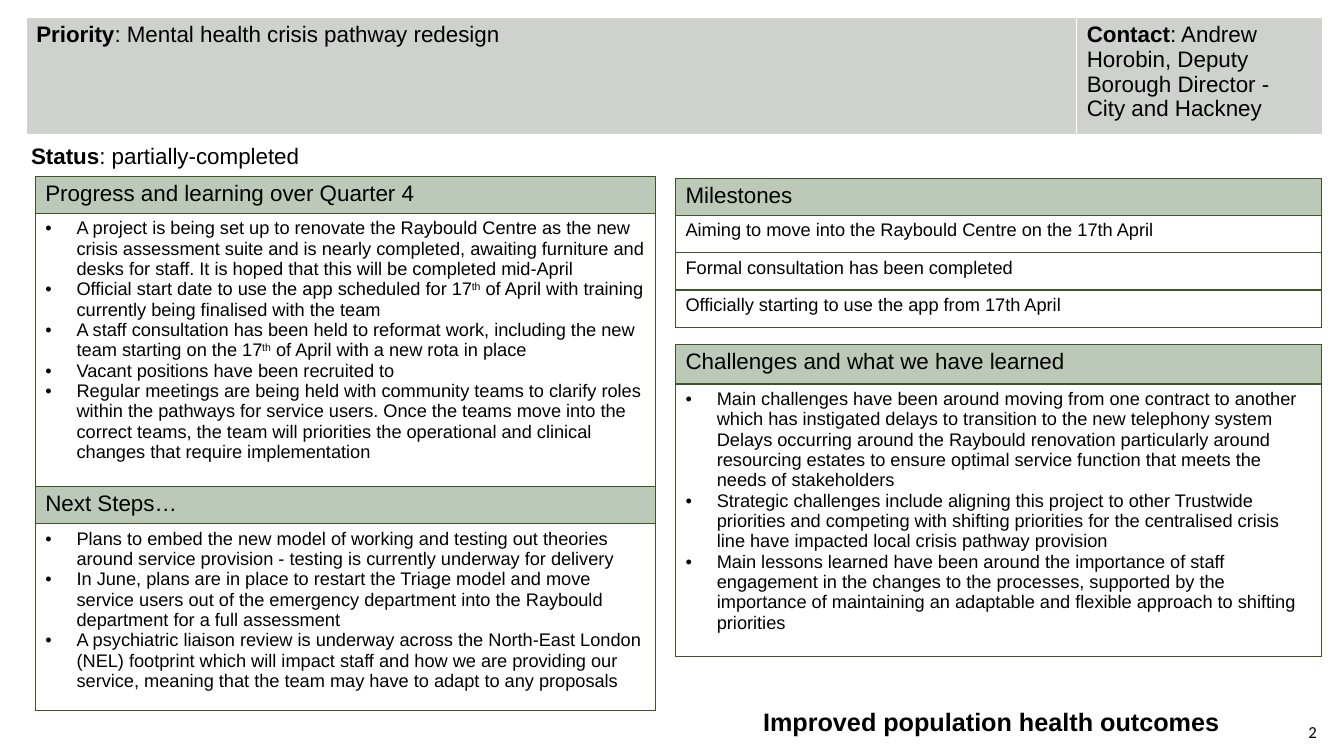
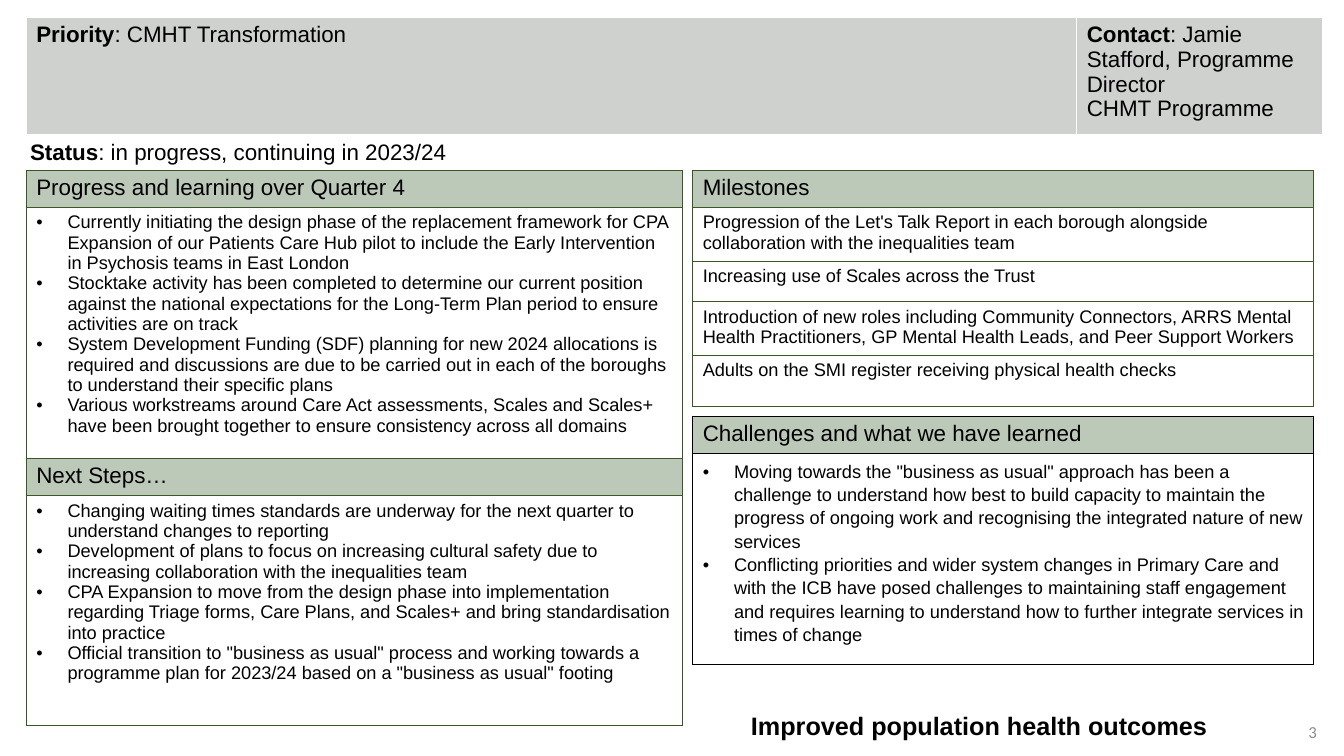
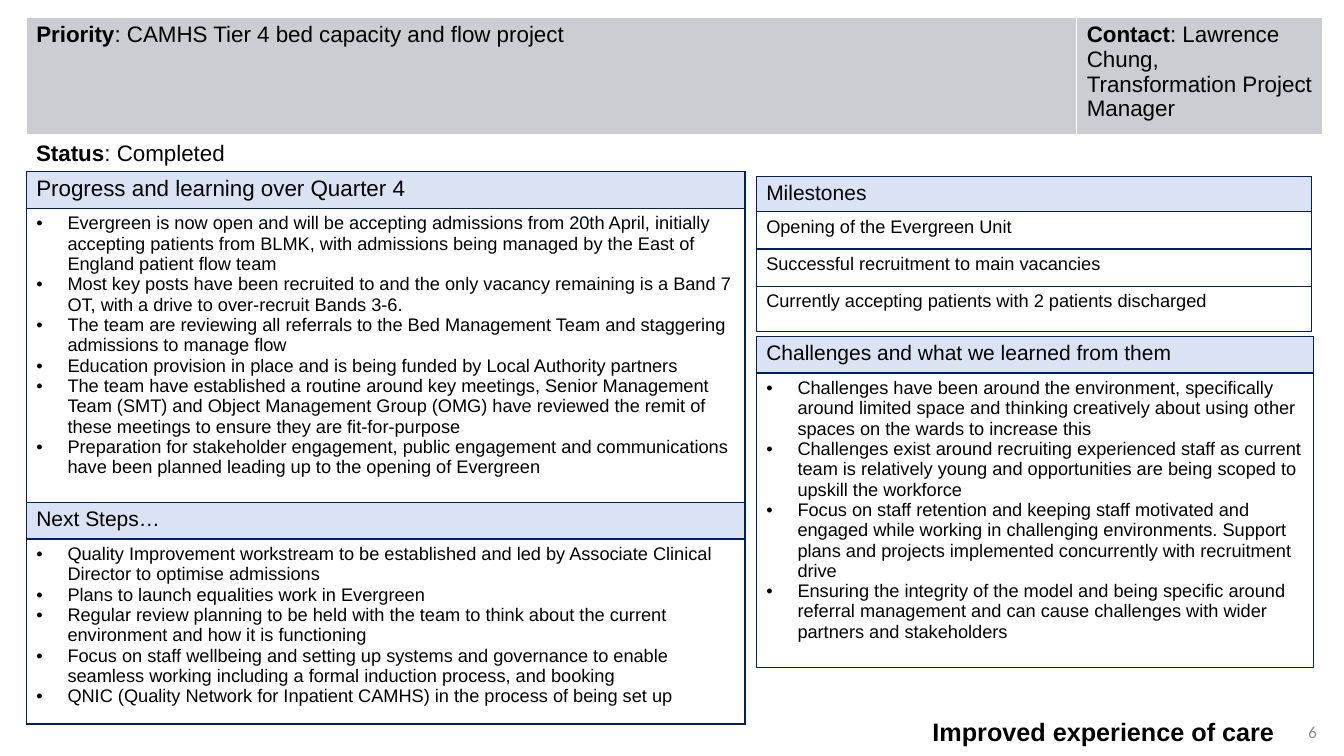
from collections import namedtuple

from lxml import etree
from pptx import Presentation
from pptx.dml.color import RGBColor
from pptx.enum.text import MSO_ANCHOR, PP_ALIGN
from pptx.oxml.ns import qn
from pptx.util import Inches, Pt

RIGHT = PP_ALIGN.RIGHT
TOP, MIDDLE = MSO_ANCHOR.TOP, MSO_ANCHOR.MIDDLE

FONT, NUMBER_FONT = "Arial", "Calibri"
BLACK, WHITE, GREY = "000000", "FFFFFF", "8C8C8C"
HEADING_SIZE, BODY_SIZE, OUTCOME_SIZE, NUMBER_SIZE = 16, 13, 18, 12
BULLET_INDENT = 0.31

Theme = namedtuple("Theme", "banner heading border")
GREEN = Theme("CED1CD", "BCC9B9", "385723")
BLUE = Theme("CCCDD2", "DAE3F3", "002060")

# A section has a heading and body rows; heights start with the heading's.
Section = namedtuple("Section", "heading rows heights bulleted size spacing",
                     defaults=(True, HEADING_SIZE, 1.0))
Panel = namedtuple("Panel", "left top width sections border", defaults=(None,))
Report = namedtuple("Report", "theme priority contact status status_at panels "
                              "outcome outcome_at number number_color")


def rgb(color):
    return RGBColor.from_string(color)


def add_run(paragraph, text, size, bold=False, color=BLACK, font=FONT):
    run = paragraph.add_run()
    run.text = text
    run.font.size = Pt(size)
    run.font.bold = bold
    run.font.name = font
    run.font.color.rgb = rgb(color)
    return run


def add_rich_text(paragraph, text, size):
    """Write text in which parts between carets are superscript."""
    for index, part in enumerate(text.split("^")):
        run = add_run(paragraph, part, size)
        if index % 2:
            run.font._element.set("baseline", "30000")


def add_labelled_text(paragraph, label, text):
    add_run(paragraph, label, HEADING_SIZE, bold=True)
    add_run(paragraph, f": {text}", HEADING_SIZE)


def add_bullet(paragraph):
    properties = paragraph._p.get_or_add_pPr()
    properties.set("marL", str(Inches(BULLET_INDENT)))
    properties.set("indent", str(-Inches(BULLET_INDENT)))
    etree.SubElement(properties, qn("a:buFont"), typeface=FONT)
    etree.SubElement(properties, qn("a:buChar"), char="•")


def next_paragraph(text_frame, index):
    return text_frame.add_paragraph() if index else text_frame.paragraphs[0]


def format_cell(cell, border, fill=None):
    if fill:
        cell.fill.solid()
        cell.fill.fore_color.rgb = rgb(fill)
    else:
        cell.fill.background()
    properties = cell._tc.get_or_add_tcPr()
    for position, side in enumerate(("lnL", "lnR", "lnT", "lnB")):
        line = etree.Element(qn(f"a:{side}"), w=str(Pt(1)))
        solid = etree.SubElement(line, qn("a:solidFill"))
        etree.SubElement(solid, qn("a:srgbClr"), val=border)
        properties.insert(position, line)


def add_plain_table(slide, left, top, widths, heights):
    table = slide.shapes.add_table(
        len(heights), len(widths), Inches(left), Inches(top),
        Inches(sum(widths)), Inches(sum(heights))).table
    table.first_row = table.horz_banding = False
    for column, width in zip(table.columns, widths):
        column.width = Inches(width)
    for row, height in zip(table.rows, heights):
        row.height = Inches(height)
    return table


def add_banner(slide, report):
    table = add_plain_table(slide, 0.26, 0.17, [10.42, 2.44], [1.17])
    contact, *more_lines = report.contact
    labelled = (("Priority", report.priority), ("Contact", contact))
    for column, (label, text) in enumerate(labelled):
        cell = table.cell(0, column)
        add_labelled_text(cell.text_frame.paragraphs[0], label, text)
        format_cell(cell, WHITE, report.theme.banner)
    for line in more_lines:
        add_run(table.cell(0, 1).text_frame.add_paragraph(), line, HEADING_SIZE)


def add_panel(slide, panel, theme):
    """Draw a one-column table of headings, each over its body rows."""
    border = panel.border or theme.border
    heights = [height for section in panel.sections for height in section.heights]
    table = add_plain_table(slide, panel.left, panel.top, [panel.width], heights)
    cells = table.iter_cells()
    for section in panel.sections:
        heading = next(cells)
        add_run(heading.text_frame.paragraphs[0], section.heading, section.size)
        format_cell(heading, border, theme.heading)
        # Bullets share one cell; plain items take a cell each.
        groups = [section.rows] if section.bulleted else [[row] for row in section.rows]
        for group in groups:
            cell = next(cells)
            for index, text in enumerate(group):
                paragraph = next_paragraph(cell.text_frame, index)
                paragraph.line_spacing = section.spacing
                if section.bulleted:
                    add_bullet(paragraph)
                add_rich_text(paragraph, text, BODY_SIZE)
            format_cell(cell, border)


def add_text_box(slide, left, top, width, height, anchor=TOP):
    """Add an empty text box and return its first paragraph."""
    box = slide.shapes.add_textbox(Inches(left), Inches(top), Inches(width), Inches(height))
    box.text_frame.word_wrap = True
    box.text_frame.vertical_anchor = anchor
    return box.text_frame.paragraphs[0]


def add_report(presentation, report):
    slide = presentation.slides.add_slide(presentation.slide_layouts[6])
    add_banner(slide, report)
    status = add_text_box(slide, *report.status_at, 4.94, 0.37)
    add_labelled_text(status, "Status", report.status)
    for panel in report.panels:
        add_panel(slide, panel, report.theme)
    outcome = add_text_box(slide, *report.outcome_at, 4.87, 0.42)
    outcome.line_spacing = 1.15
    outcome.space_after = Pt(10)
    add_run(outcome, report.outcome, OUTCOME_SIZE, bold=True)
    number = add_text_box(slide, 10.16, 7.06, 3, 0.4, MIDDLE)
    number.alignment = RIGHT
    add_run(number, report.number, NUMBER_SIZE, color=report.number_color, font=NUMBER_FONT)


PROGRESS = "Progress and learning over Quarter 4"
NEXT_STEPS = "Next Steps…"
MILESTONES = "Milestones"
CHALLENGES = "Challenges and what we have learned"
POPULATION_HEALTH = "Improved population health outcomes"

CRISIS_PATHWAY = Report(
    GREEN, "Mental health crisis pathway redesign",
    ["Andrew Horobin, Deputy Borough Director - City and Hackney"],
    "partially-completed", (0.21, 1.36),
    [
        Panel(0.35, 1.75, 6.15, [
            Section(PROGRESS, [
                "A project is being set up to renovate the Raybould Centre as the new crisis assessment "
                "suite and is nearly completed, awaiting furniture and desks for staff. It is hoped that "
                "this will be completed mid-April",
                "Official start date to use the app scheduled for 17^th^ of April with training currently "
                "being finalised with the team",
                "A staff consultation has been held to reformat work, including the new team starting on "
                "the 17^th^ of April with a new rota in place",
                "Vacant positions have been recruited to",
                "Regular meetings are being held with community teams to clarify roles within the "
                "pathways for service users. Once the teams move into the correct teams, the team will "
                "priorities the operational and clinical changes that require implementation",
            ], [0.36, 2.71]),
            Section(NEXT_STEPS, [
                "Plans to embed the new model of working and testing out theories around service "
                "provision - testing is currently underway for delivery",
                "In June, plans are in place to restart the Triage model and move service users out of "
                "the emergency department into the Raybould department for a full assessment",
                "A psychiatric liaison review is underway across the North-East London (NEL) footprint "
                "which will impact staff and how we are providing our service, meaning that the team may "
                "have to adapt to any proposals",
            ], [0.37, 1.85]),
        ]),
        Panel(6.7, 1.77, 6.41, [
            Section(MILESTONES, [
                "Aiming to move into the Raybould Centre on the 17th April",
                "Formal consultation has been completed",
                "Officially starting to use the app from 17th April",
            ], [0.35, 0.37, 0.37, 0.37], bulleted=False),
        ]),
        Panel(6.7, 3.42, 6.41, [
            Section(CHALLENGES, [
                "Main challenges have been around moving from one contract to another which has "
                "instigated delays to transition to the new telephony system Delays occurring around the "
                "Raybould renovation particularly around resourcing estates to ensure optimal service "
                "function that meets the needs of stakeholders",
                "Strategic challenges include aligning this project to other Trustwide priorities and "
                "competing with shifting priorities for the centralised crisis line have impacted local "
                "crisis pathway provision",
                "Main lessons learned have been around the importance of staff engagement in the changes "
                "to the processes, supported by the importance of maintaining an adaptable and flexible "
                "approach to shifting priorities",
            ], [0.39, 2.7]),
        ]),
    ],
    POPULATION_HEALTH, (7.47, 6.91), "2", BLACK)

COMMUNITY_TEAMS = Report(
    GREEN, "CMHT Transformation",
    ["Jamie Stafford, Programme Director", "CHMT Programme"],
    "in progress, continuing in 2023/24", (0.2, 1.32),
    [
        Panel(0.26, 1.69, 6.51, [
            Section(PROGRESS, [
                "Currently initiating the design phase of the replacement framework for CPA Expansion of "
                "our Patients Care Hub pilot to include the Early Intervention in Psychosis teams in "
                "East London",
                "Stocktake activity has been completed to determine our current position against the "
                "national expectations for the Long-Term Plan period to ensure activities are on track",
                "System Development Funding (SDF) planning for new 2024 allocations is required and "
                "discussions are due to be carried out in each of the boroughs to understand their "
                "specific plans",
                "Various workstreams around Care Act assessments, Scales and Scales+ have been brought "
                "together to ensure consistency across all domains",
            ], [0.36, 2.49]),
            Section(NEXT_STEPS, [
                "Changing waiting times standards are underway for the next quarter to understand "
                "changes to reporting",
                "Development of plans to focus on increasing cultural safety due to increasing "
                "collaboration with the inequalities team",
                "CPA Expansion to move from the design phase into implementation regarding Triage forms, "
                "Care Plans, and Scales+ and bring standardisation into practice",
                'Official transition to "business as usual" process and working towards a programme plan '
                'for 2023/24 based on a "business as usual" footing',
            ], [0.37, 2.28]),
        ]),
        Panel(6.87, 1.69, 6.16, [
            Section(MILESTONES, [
                "Progression of the Let's Talk Report in each borough alongside collaboration with the "
                "inequalities team",
                "Increasing use of Scales across the Trust",
                "Introduction of new roles including Community Connectors, ARRS Mental Health "
                "Practitioners, GP Mental Health Leads, and Peer Support Workers",
                "Adults on the SMI register receiving physical health checks",
            ], [0.36, 0.51, 0.4, 0.51, 0.51], bulleted=False),
        ]),
        Panel(6.87, 4.13, 6.16, [
            Section(CHALLENGES, [
                'Moving towards the "business as usual" approach has been a challenge to understand how '
                "best to build capacity to maintain the progress of ongoing work and recognising the "
                "integrated nature of new services",
                "Conflicting priorities and wider system changes in Primary Care and with the ICB have "
                "posed challenges to maintaining staff engagement and requires learning to understand "
                "how to further integrate services in times of change",
            ], [0.37, 2.09], spacing=1.15),
        ], BLACK),
    ],
    POPULATION_HEALTH, (7.35, 6.95), "3", GREY)

BED_CAPACITY = Report(
    BLUE, "CAMHS Tier 4 bed capacity and flow project",
    ["Lawrence Chung, Transformation Project Manager"],
    "Completed", (0.26, 1.33),
    [
        Panel(0.26, 1.7, 7.13, [
            Section(PROGRESS, [
                "Evergreen is now open and will be accepting admissions from 20th April, initially "
                "accepting patients from BLMK, with admissions being managed by the East of England "
                "patient flow team",
                "Most key posts have been recruited to and the only vacancy remaining is a Band 7 OT, "
                "with a drive to over-recruit Bands 3-6.",
                "The team are reviewing all referrals to the Bed Management Team and staggering "
                "admissions to manage flow",
                "Education provision in place and is being funded by Local Authority partners",
                "The team have established a routine around key meetings, Senior Management Team (SMT) "
                "and Object Management Group (OMG) have reviewed the remit of these meetings to ensure "
                "they are fit-for-purpose",
                "Preparation for stakeholder engagement, public engagement and communications have been "
                "planned leading up to the opening of Evergreen",
            ], [0.36, 2.92]),
            Section(NEXT_STEPS, [
                "Quality Improvement workstream to be established and led by Associate Clinical Director "
                "to optimise admissions",
                "Plans to launch equalities work in Evergreen",
                "Regular review planning to be held with the team to think about the current environment "
                "and how it is functioning",
                "Focus on staff wellbeing and setting up systems and governance to enable seamless "
                "working including a formal induction process, and booking",
                "QNIC (Quality Network for Inpatient CAMHS) in the process of being set up",
            ], [0.36, 1.83], size=15),
        ]),
        Panel(7.5, 1.75, 5.51, [
            Section(MILESTONES, [
                "Opening of the Evergreen Unit",
                "Successful recruitment to main vacancies",
                "Currently accepting patients with 2 patients discharged",
            ], [0.35, 0.37, 0.37, 0.45], bulleted=False, size=15),
        ]),
        Panel(7.5, 3.34, 5.53, [
            Section("Challenges and what we learned from them", [
                "Challenges have been around the environment, specifically around limited space and "
                "thinking creatively about using other spaces on the wards to increase this",
                "Challenges exist around recruiting experienced staff as current team is relatively "
                "young and opportunities are being scoped to upskill the workforce",
                "Focus on staff retention and keeping staff motivated and engaged while working in "
                "challenging environments. Support plans and projects implemented concurrently with "
                "recruitment drive",
                "Ensuring the integrity of the model and being specific around referral management and "
                "can cause challenges with wider partners and stakeholders",
            ], [0.36, 2.92], size=15),
        ]),
    ],
    "Improved experience of care", (9.15, 7.01), "6", GREY)


def main():
    presentation = Presentation()
    presentation.slide_width = Inches(13.33)
    presentation.slide_height = Inches(7.5)
    for report in (CRISIS_PATHWAY, COMMUNITY_TEAMS, BED_CAPACITY):
        add_report(presentation, report)
    presentation.save("out.pptx")


if __name__ == "__main__":
    main()
